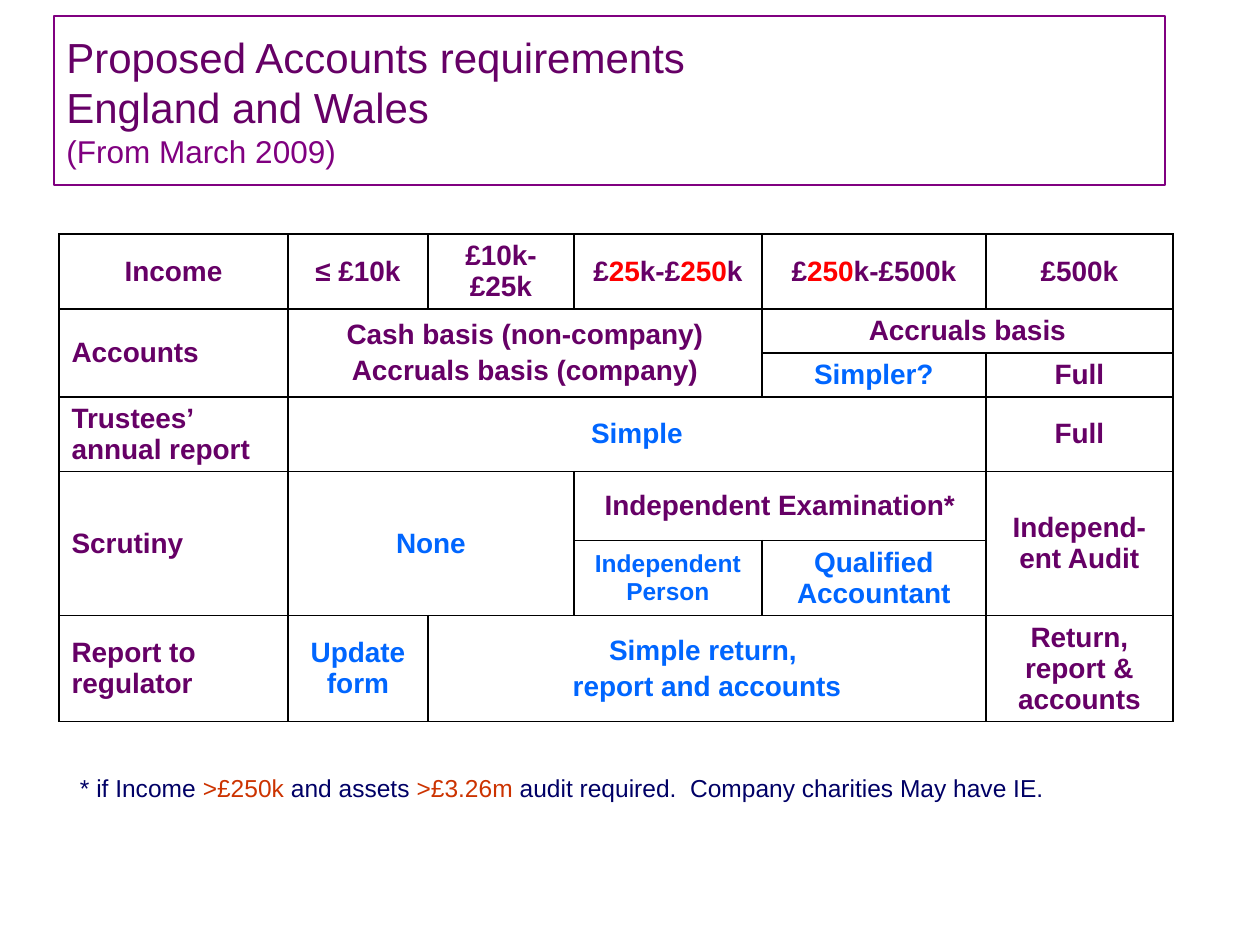
from lxml import etree
from pptx import Presentation
from pptx.dml.color import RGBColor
from pptx.enum.shapes import MSO_SHAPE
from pptx.enum.text import MSO_ANCHOR, PP_ALIGN
from pptx.oxml.ns import qn
from pptx.util import Emu, Pt

LEFT, CENTER = PP_ALIGN.LEFT, PP_ALIGN.CENTER
MIDDLE = MSO_ANCHOR.MIDDLE
RECTANGLE = MSO_SHAPE.RECTANGLE

PX = 914400 // 126
FONT = "Arial"
COLORS = {
    "plum": "660066", "purple": "800080", "blue": "0066FF", "red": "FF0000",
    "navy": "000066", "rust": "CC3300", "black": "000000",
}

TITLE = [
    [("Proposed Accounts requirements", "plum", 24)],
    [("England and Wales", "plum", 24)],
    [("(From March 2009)", "purple", 18)],
]
FOOTNOTE = [[
    ("* if Income ", "navy", 14), (">£250k", "rust", 14),
    (" and assets ", "navy", 14), (">£3.26m", "rust", 14),
    (" audit required.  Company charities May have IE.", "navy", 14),
]]


def plain(color, *lines, size=16):
    return [[(line, color, size)] for line in lines]


def banded(*pieces):
    return [[(text, color, 16) for text, color in pieces]]


COLUMNS = [229, 140, 146, 188, 224, 187]
ROWS = [45, 75, 44, 44, 74, 69, 75, 106]
CELLS = [
    (0, 0, 1, 6, []),
    (1, 0, 1, 1, plain("plum", "Income")),
    (1, 1, 1, 1, plain("plum", "≤ £10k")),
    (1, 2, 1, 1, plain("plum", "£10k-£25k")),
    (1, 3, 1, 1, banded(("£", "plum"), ("25", "red"), ("k-£", "plum"),
                        ("250", "red"), ("k", "plum"))),
    (1, 4, 1, 1, banded(("£", "plum"), ("250", "red"), ("k-£500k", "plum"))),
    (1, 5, 1, 1, plain("plum", "£500k")),
    (2, 0, 2, 1, plain("plum", "Accounts")),
    (2, 1, 2, 3, plain("plum", "Cash basis (non-company)",
                       "Accruals basis (company)")),
    (2, 4, 1, 2, plain("plum", "Accruals basis")),
    (3, 4, 1, 1, plain("blue", "Simpler?")),
    (3, 5, 1, 1, plain("plum", "Full")),
    (4, 0, 1, 1, plain("plum", "Trustees’ annual report")),
    (4, 1, 1, 4, plain("blue", "Simple")),
    (4, 5, 1, 1, plain("plum", "Full")),
    (5, 0, 2, 1, plain("plum", "Scrutiny")),
    (5, 1, 2, 2, plain("blue", "None")),
    (5, 3, 1, 2, plain("plum", "Independent Examination*")),
    (5, 5, 2, 1, plain("plum", "Independ-ent Audit")),
    (6, 3, 1, 1, plain("blue", "Independent Person", size=14)),
    (6, 4, 1, 1, plain("blue", "Qualified Accountant")),
    (7, 0, 1, 1, plain("plum", "Report to regulator")),
    (7, 1, 1, 1, plain("blue", "Update form")),
    (7, 2, 1, 3, plain("blue", "Simple return, ", "report and accounts")),
    (7, 5, 1, 1, plain("plum", "Return, report & accounts")),
]


def px(*lengths):
    return [Emu(length * PX) for length in lengths]


def rgb(name):
    return RGBColor.from_string(COLORS[name])


def add_spans(para, spans, bold=False):
    for text, color, size in spans:
        span = para.add_run()
        span.text = text
        span.font.name = FONT
        span.font.size = Pt(size)
        span.font.bold = bold
        span.font.color.rgb = rgb(color)


def write(frame, lines, align, bold=False):
    for index, spans in enumerate(lines):
        para = frame.add_paragraph() if index else frame.paragraphs[0]
        para.alignment = align
        if index:
            para.space_before = Pt(3)
        add_spans(para, spans, bold)


def set_borders(cell, shown):
    properties = cell._tc.get_or_add_tcPr()
    for index, side in enumerate(("lnL", "lnR", "lnT", "lnB")):
        line = etree.Element(qn(f"a:{side}"), w=str(Pt(1)))
        if side in shown:
            fill = etree.SubElement(line, qn("a:solidFill"))
            etree.SubElement(fill, qn("a:srgbClr"), val=COLORS["black"])
        else:
            etree.SubElement(line, qn("a:noFill"))
        properties.insert(index, line)


def add_requirements(page):
    frame = page.shapes.add_table(len(ROWS), len(COLUMNS),
                                  *px(59, 189, sum(COLUMNS), sum(ROWS)))
    table = frame.table
    table.first_row = table.horz_banding = False
    for column, width in zip(table.columns, COLUMNS):
        column.width = Emu(width * PX)
    for index, height in enumerate(ROWS):
        table.rows[index].height = Emu(height * PX)
        for cell in table.rows[index].cells:
            cell.fill.background()
            cell.vertical_anchor = MIDDLE
            set_borders(cell, ("lnL", "lnR", "lnT", "lnB") if index else ("lnB",))
            if index == 0:
                cell.margin_top = cell.margin_bottom = 0
    for row, column, height, width, lines in CELLS:
        cell = table.cell(row, column)
        if height * width > 1:
            cell.merge(table.cell(row + height - 1, column + width - 1))
        align = LEFT if column == 0 and row > 1 else CENTER
        write(cell.text_frame, lines, align, bold=True)


def add_footnote(page):
    box = page.shapes.add_textbox(*px(54, 767, 1016, 42))
    box.text_frame.word_wrap = True
    write(box.text_frame, FOOTNOTE, CENTER)


def add_title(page):
    box = page.shapes.add_shape(RECTANGLE, *px(54, 16, 1111, 169))
    box.shadow.inherit = False
    box.fill.background()
    box.line.color.rgb = rgb("purple")
    box.line.width = Pt(0.75)
    box.text_frame.word_wrap = True
    box.text_frame.vertical_anchor = MIDDLE
    para = box.text_frame.paragraphs[0]
    para.alignment = LEFT
    for index, spans in enumerate(TITLE):
        if index:
            para.add_line_break()
        add_spans(para, spans)


def main():
    deck = Presentation()
    deck.slide_width, deck.slide_height = px(1260, 945)
    page = deck.slides.add_slide(deck.slide_layouts[6])
    add_requirements(page)
    add_footnote(page)
    add_title(page)
    deck.save("out.pptx")


if __name__ == "__main__":
    main()
